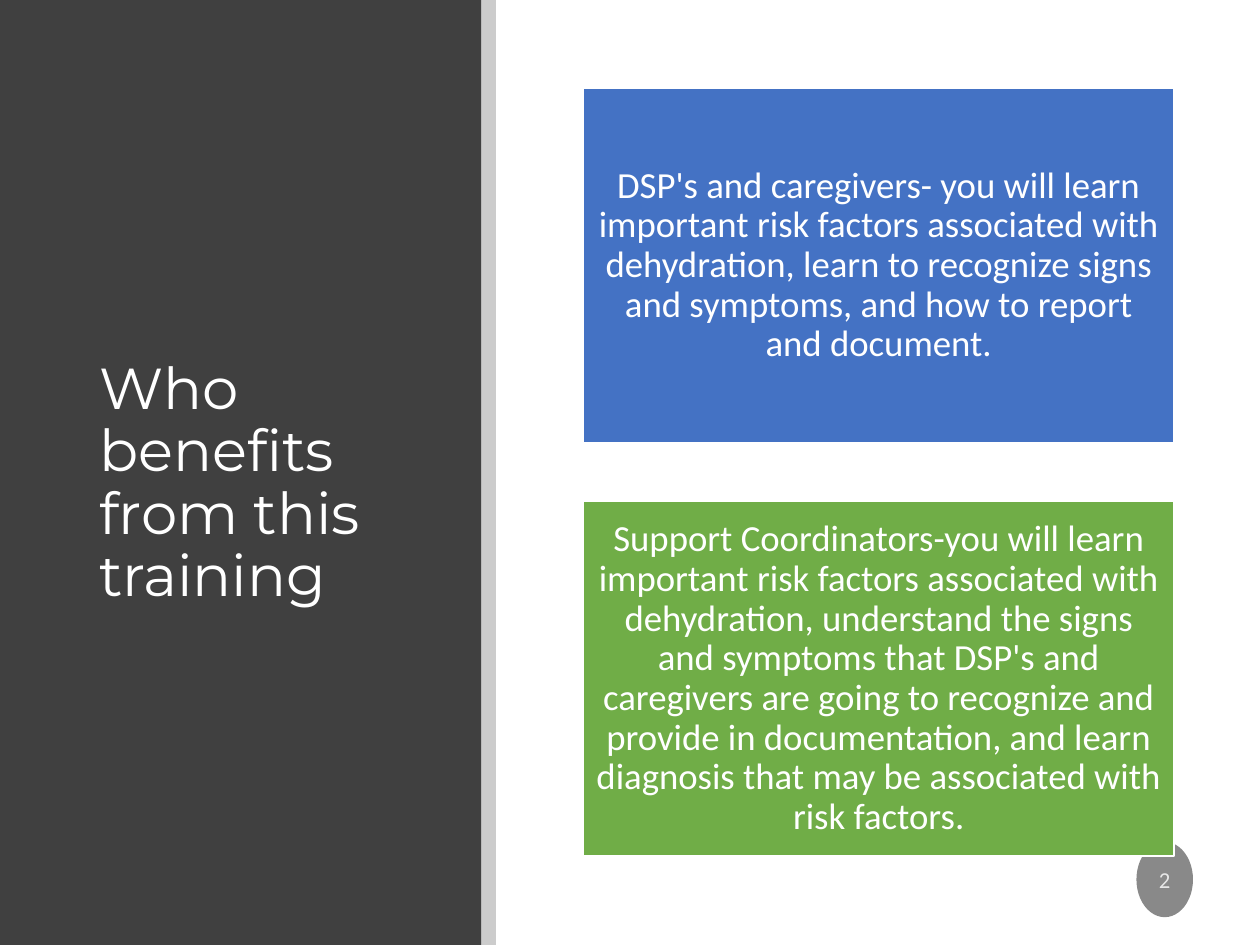
"""Build a slide with a dark title panel and two stacked audience cards."""
import pptx
import pptx.dml.color
import pptx.enum.shapes
import pptx.enum.text
import pptx.oxml.ns
import pptx.util
from lxml import etree

Cm = pptx.util.Cm
Pt = pptx.util.Pt
RGBColor = pptx.dml.color.RGBColor
MSO_SHAPE = pptx.enum.shapes.MSO_SHAPE
PP_ALIGN = pptx.enum.text.PP_ALIGN

WHITE = RGBColor(0xFF, 0xFF, 0xFF)
BLACK = RGBColor(0x00, 0x00, 0x00)
CHARCOAL = RGBColor(0x40, 0x40, 0x40)
GRAY = RGBColor(0x89, 0x89, 0x89)
BLUE = RGBColor(0x44, 0x72, 0xC4)
GREEN = RGBColor(0x70, 0xAD, 0x47)

TITLE = "Who benefits from this training"
PAGE_NUMBER = "2"
CARDS = [
    (BLUE, "DSP's and caregivers- you will learn important risk factors associated with "
           "dehydration, learn to recognize signs and symptoms, and how to report and document."),
    (GREEN, "Support Coordinators-you will learn important risk factors associated with "
            "dehydration, understand the signs and symptoms that DSP's and caregivers are going "
            "to recognize and provide in documentation, and learn diagnosis that may be "
            "associated with risk factors."),
]

SLIDE_WIDTH, SLIDE_HEIGHT = 25.4, 19.05
PANEL_WIDTH, STRIP_WIDTH = 9.7, 0.3
CARD_LEFT, CARD_TOP, CARD_WIDTH, CARD_HEIGHT, CARD_GAP = 11.76, 1.78, 11.91, 7.15, 1.18
CARD_INSET = 0.23


def add_filled_shape(slide, kind, left, top, width, height, color):
    shape = slide.shapes.add_shape(kind, Cm(left), Cm(top), Cm(width), Cm(height))
    shape.shadow.inherit = False
    shape.fill.solid()
    shape.fill.fore_color.rgb = color
    shape.line.fill.background()
    return shape


def set_opacity(properties, percent):
    color = properties.find(".//" + pptx.oxml.ns.qn("a:srgbClr"))
    etree.SubElement(color, pptx.oxml.ns.qn("a:alpha"), val=str(percent * 1000))


def write_text(shape, text, font_name, size, alignment, line_spacing=1.0):
    frame = shape.text_frame
    frame.word_wrap = True
    frame.auto_size = pptx.enum.text.MSO_AUTO_SIZE.NONE
    frame.vertical_anchor = pptx.enum.text.MSO_ANCHOR.MIDDLE
    paragraph = frame.paragraphs[0]
    paragraph.alignment = alignment
    paragraph.line_spacing = line_spacing
    run = paragraph.add_run()
    run.text = text
    run.font.name = font_name
    run.font.size = Pt(size)
    run.font.color.rgb = WHITE
    return run


def set_insets(shape, inset):
    frame = shape.text_frame
    frame.margin_left = frame.margin_right = Cm(inset)
    frame.margin_top = frame.margin_bottom = Cm(inset)


def main():
    presentation = pptx.Presentation()
    presentation.slide_width = Cm(SLIDE_WIDTH)
    presentation.slide_height = Cm(SLIDE_HEIGHT)
    slide = presentation.slides.add_slide(presentation.slide_layouts[5])
    slide.background.fill.solid()
    slide.background.fill.fore_color.rgb = WHITE

    title = slide.shapes.title
    title.left, title.top, title.width, title.height = Cm(1.75), Cm(2.26), Cm(6.96), Cm(15.01)
    write_text(title, TITLE, "Montserrat", 33, PP_ALIGN.LEFT, 0.9)

    panel = add_filled_shape(slide, MSO_SHAPE.RECTANGLE, 0, 0, PANEL_WIDTH, SLIDE_HEIGHT, CHARCOAL)
    title.element.addprevious(panel.element)
    strip = add_filled_shape(
        slide, MSO_SHAPE.RECTANGLE, PANEL_WIDTH, 0, STRIP_WIDTH, SLIDE_HEIGHT, BLACK)
    set_opacity(strip.element.spPr, 20)

    badge = add_filled_shape(slide, MSO_SHAPE.OVAL, 22.91, 16.97, 1.14, 1.52, GRAY)
    set_insets(badge, 0)
    number = write_text(badge, PAGE_NUMBER, "Calibri", 13, PP_ALIGN.CENTER)
    badge.text_frame.paragraphs[0].space_after = Pt(6)
    set_opacity(number.font._element, 80)

    for index, (color, text) in enumerate(CARDS):
        top = CARD_TOP + index * (CARD_HEIGHT + CARD_GAP)
        card = add_filled_shape(
            slide, MSO_SHAPE.RECTANGLE, CARD_LEFT, top, CARD_WIDTH, CARD_HEIGHT, color)
        card.line.color.rgb = WHITE
        card.line.width = Pt(1)
        set_insets(card, CARD_INSET)
        write_text(card, text, "Calibri", 21, PP_ALIGN.CENTER, 0.9)

    presentation.save("out.pptx")


if __name__ == "__main__":
    main()
